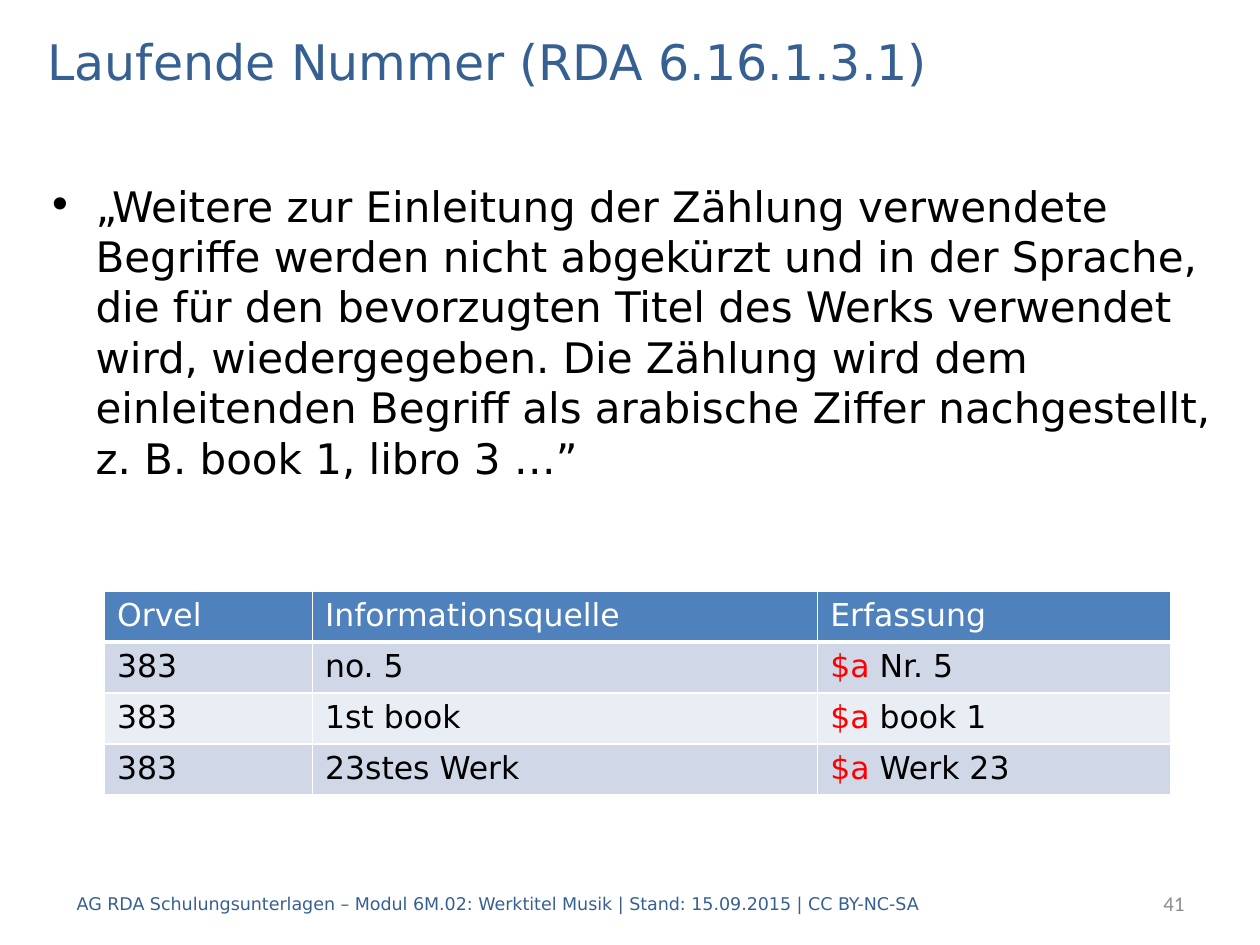
"""Build the slide on serial numbers of musical works (RDA 6.16.1.3.1)."""
from dataclasses import dataclass

from lxml.etree import SubElement
from pptx import Presentation
from pptx.dml.color import RGBColor
from pptx.enum.text import MSO_ANCHOR, PP_ALIGN
from pptx.oxml.ns import qn
from pptx.util import Inches, Pt

COLORS = {
    "heading": "376092",
    "text": "000000",
    "number": "8C8C8C",
    "white": "FFFFFF",
    "subfield": "FF0000",
    "header": "4F81BD",
    "band_dark": "D0D8E8",
    "band_light": "E9EDF4",
}
FONT = "DejaVu Sans"
QUOTE = (
    "„Weitere zur Einleitung der Zählung verwendete Begriffe werden nicht "
    "abgekürzt und in der Sprache, die für den bevorzugten Titel des Werks "
    "verwendet wird, wiedergegeben. Die Zählung wird dem einleitenden Begriff "
    "als arabische Ziffer nachgestellt, z. B. book 1, libro 3 …”"
)
SUBFIELD = "$a "
COLUMN_WIDTHS = (1.65, 4.01, 2.8)
TABLE_HEIGHT = 1.62
ROWS = (
    ("Orvel", "Informationsquelle", "Erfassung"),
    ("383", "no. 5", "$a Nr. 5"),
    ("383", "1st book", "$a book 1"),
    ("383", "23stes Werk", "$a Werk 23"),
)


@dataclass
class TextBlock:
    """Text with its place and look."""

    text: str
    left: float
    top: float
    width: float
    height: float
    size: float
    color: str
    font: str = FONT
    align: PP_ALIGN = PP_ALIGN.LEFT
    anchor: MSO_ANCHOR = MSO_ANCHOR.MIDDLE
    margin_top: float = 0.05
    bullet: bool = False


BLOCKS = (
    TextBlock(QUOTE, 0.28, 0.92, 9.45, 5.98, 24, "text",
              anchor=MSO_ANCHOR.TOP, margin_top=0.51, bullet=True),
    TextBlock("41", 7.91, 6.97, 1.59, 0.4, 12, "number",
              font="Calibri", align=PP_ALIGN.RIGHT),
    TextBlock("Laufende Nummer (RDA 6.16.1.3.1)",
              0.28, 0.2, 9.45, 0.56, 28, "heading"),
    TextBlock("AG RDA Schulungsunterlagen – Modul 6M.02: Werktitel Musik | "
              "Stand: 15.09.2015 | CC BY-NC-SA",
              0.51, 6.97, 8.35, 0.4, 10, "heading"),
)


def style_span(span, size: float, color: str, font: str = FONT) -> None:
    """Set font, size and colour of a run."""
    span.font.name = font
    span.font.size = Pt(size)
    span.font.bold = False
    span.font.color.rgb = RGBColor.from_string(COLORS[color])


def add_bullet(para, indent: float) -> None:
    """Give a paragraph a hanging bullet."""
    properties = para._p.get_or_add_pPr()
    properties.set("marL", str(Inches(indent)))
    properties.set("indent", str(-Inches(indent)))
    SubElement(properties, qn("a:buFont")).set("typeface", FONT)
    SubElement(properties, qn("a:buChar")).set("char", "•")


def add_text(page, block: TextBlock) -> None:
    """Draw one text block."""
    box = page.shapes.add_textbox(Inches(block.left), Inches(block.top),
                                  Inches(block.width), Inches(block.height))
    frame = box.text_frame
    frame.word_wrap = True
    frame.vertical_anchor = block.anchor
    frame.margin_top = Inches(block.margin_top)
    frame.text = block.text
    para = frame.paragraphs[0]
    para.alignment = block.align
    if block.bullet:
        add_bullet(para, 0.38)
    style_span(para.runs[0], block.size, block.color, block.font)


def add_borders(cell, bottom_width: float) -> None:
    """Draw white lines around a cell."""
    properties = cell._tc.get_or_add_tcPr()
    widths = {"lnL": 1, "lnR": 1, "lnT": 1, "lnB": bottom_width}
    for side, width in widths.items():
        line = SubElement(properties, qn(f"a:{side}"), w=str(Pt(width)))
        fill = SubElement(line, qn("a:solidFill"))
        SubElement(fill, qn("a:srgbClr"), val=COLORS["white"])


def fill_cell(cell, text: str, row: int) -> None:
    """Write and colour one table cell."""
    header = row == 0
    add_borders(cell, 3 if header else 1)
    band = "header" if header else ("band_light", "band_dark")[row % 2]
    cell.fill.solid()
    cell.fill.fore_color.rgb = RGBColor.from_string(COLORS[band])
    para = cell.text_frame.paragraphs[0]
    if text.startswith(SUBFIELD):
        code = para.add_run()
        code.text = SUBFIELD
        style_span(code, 18, "subfield")
    span = para.add_run()
    span.text = text.removeprefix(SUBFIELD)
    style_span(span, 18, "white" if header else "text")


def add_examples(page) -> None:
    """Draw the table of examples."""
    table = page.shapes.add_table(
        len(ROWS), len(COLUMN_WIDTHS), Inches(0.83), Inches(4.69),
        Inches(sum(COLUMN_WIDTHS)), Inches(TABLE_HEIGHT)).table
    for column, width in zip(table.columns, COLUMN_WIDTHS):
        column.width = Inches(width)
    for row, texts in enumerate(ROWS):
        for column, text in enumerate(texts):
            fill_cell(table.cell(row, column), text, row)


def main() -> None:
    """Build and save the deck."""
    deck = Presentation()
    deck.slide_width = Inches(10)
    deck.slide_height = Inches(7.5)
    page = deck.slides.add_slide(deck.slide_layouts[6])
    for block in BLOCKS:
        add_text(page, block)
    add_examples(page)
    deck.save("out.pptx")


if __name__ == "__main__":
    main()
